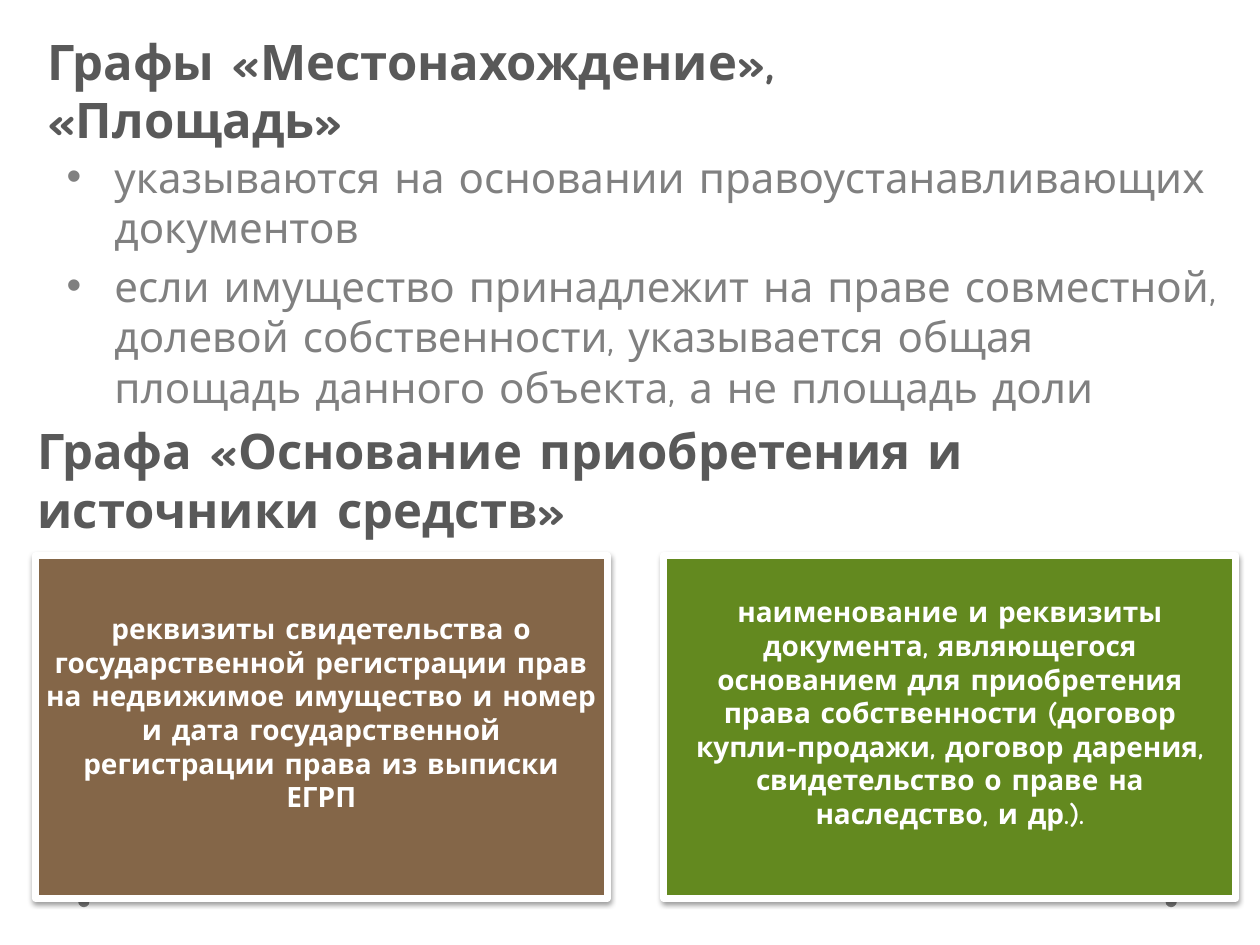
from dataclasses import dataclass

from lxml.etree import SubElement
from pptx import Presentation
from pptx.dml.color import RGBColor
from pptx.enum.shapes import MSO_SHAPE as Shape
from pptx.enum.text import MSO_ANCHOR as Anchor, PP_ALIGN as Align
from pptx.oxml.ns import qn
from pptx.util import Inches, Pt


@dataclass(frozen=True)
class Theme:
    font: str = "Comic Neue"
    heading: str = "595959"
    body: str = "808080"
    white: str = "FFFFFF"
    shadow: str = "000000"
    heading_size: int = 28
    body_size: int = 24
    card_size: int = 16


T = Theme()

# Content: headings as (left, top, lines), cards as (fill, text)
HEADINGS = [
    (0.28, 0, ["Графы «Местонахождение»,", "«Площадь»"]),
    (0.2, 3.09, ["Графа «Основание приобретения и источники средств»"]),
]
BULLETS = [
    "указываются на основании правоустанавливающих документов",
    "если имущество принадлежит на праве совместной, долевой собственности, "
    "указывается общая площадь данного объекта, а не площадь доли",
]
CARDS = [
    ("846648", "реквизиты свидетельства о государственной регистрации прав на "
               "недвижимое имущество и номер и дата государственной регистрации "
               "права из выписки ЕГРП"),
    ("63891F", "наименование и реквизиты документа, являющегося основанием для "
               "приобретения права собственности (договор купли-продажи, договор "
               "дарения, свидетельство о праве на наследство, и др.)."),
]
DOT_LEFTS = [9.25, 0.62]
CARD_LEFT, CARD_TOP, CARD_W, CARD_H, CARD_GAP = 0.28, 4.41, 4.54, 2.72, 0.45


def add_run(p, text, size, color, bold=False):
    r = p.add_run()
    r.text = text
    r.font.name, r.font.size, r.font.bold = T.font, Pt(size), bold
    r.font.color.rgb = RGBColor.from_string(color)


def add_text_frame(slide, *box):
    tf = slide.shapes.add_textbox(*map(Inches, box)).text_frame
    tf.word_wrap = True
    return tf


def add_filled(slide, kind, fill, *box):
    sp = slide.shapes.add_shape(kind, *map(Inches, box))
    sp.shadow.inherit = False
    sp.fill.solid()
    sp.fill.fore_color.rgb = RGBColor.from_string(fill)
    sp.line.fill.background()
    return sp


def set_bullet(p, indent):
    pPr = p._p.get_or_add_pPr()
    pPr.set("marL", str(Inches(indent)))
    pPr.set("indent", str(-Inches(indent)))
    SubElement(pPr, qn("a:buFont"), typeface="Arial")
    SubElement(pPr, qn("a:buChar"), char="•")


def set_shadow(sp):
    effects = sp._element.spPr.find(qn("a:effectLst"))
    shadow = SubElement(effects, qn("a:outerShdw"), blurRad=str(Pt(3.1)),
                        dist=str(Pt(1.6)), dir=str(90 * 60000), rotWithShape="0")
    color = SubElement(shadow, qn("a:srgbClr"), val=T.shadow)
    SubElement(color, qn("a:alpha"), val="38000")


prs = Presentation()
prs.slide_width, prs.slide_height = Inches(10), Inches(7.5)
slide = prs.slides.add_slide(prs.slide_layouts[6])

# Footer dots
for left in DOT_LEFTS:
    add_filled(slide, Shape.OVAL, T.body, left, 7.11, 0.09, 0.09)

# Bulleted rules
tf = add_text_frame(slide, 0.43, 1.15, 9.37, 2.28)
for i, text in enumerate(BULLETS):
    p = tf.add_paragraph() if i else tf.paragraphs[0]
    if i:
        p.space_before = Pt(0.2 * T.body_size)
    set_bullet(p, 0.38)
    add_run(p, text, T.body_size, T.body)

# Headings
for left, top, lines in HEADINGS:
    tf = add_text_frame(slide, left, top, 9, 1.23)
    tf.vertical_anchor = Anchor.BOTTOM
    p = tf.paragraphs[0]
    for i, line in enumerate(lines):
        if i:
            p.add_line_break()
        add_run(p, line, T.heading_size, T.heading, bold=True)

# Cards
for i, (fill, text) in enumerate(CARDS):
    left = CARD_LEFT + i * (CARD_W + CARD_GAP)
    sp = add_filled(slide, Shape.RECTANGLE, fill, left, CARD_TOP, CARD_W, CARD_H)
    sp.line.color.rgb = RGBColor.from_string(T.white)
    sp.line.width = Pt(4)
    set_shadow(sp)
    tf = sp.text_frame
    tf.word_wrap = True
    tf.vertical_anchor = Anchor.MIDDLE
    tf.margin_left = tf.margin_right = tf.margin_top = Inches(0.07)
    tf.margin_bottom = Inches(0.3)
    p = tf.paragraphs[0]
    p.alignment = Align.CENTER
    add_run(p, text, T.card_size, T.white, bold=True)

prs.save("out.pptx")
